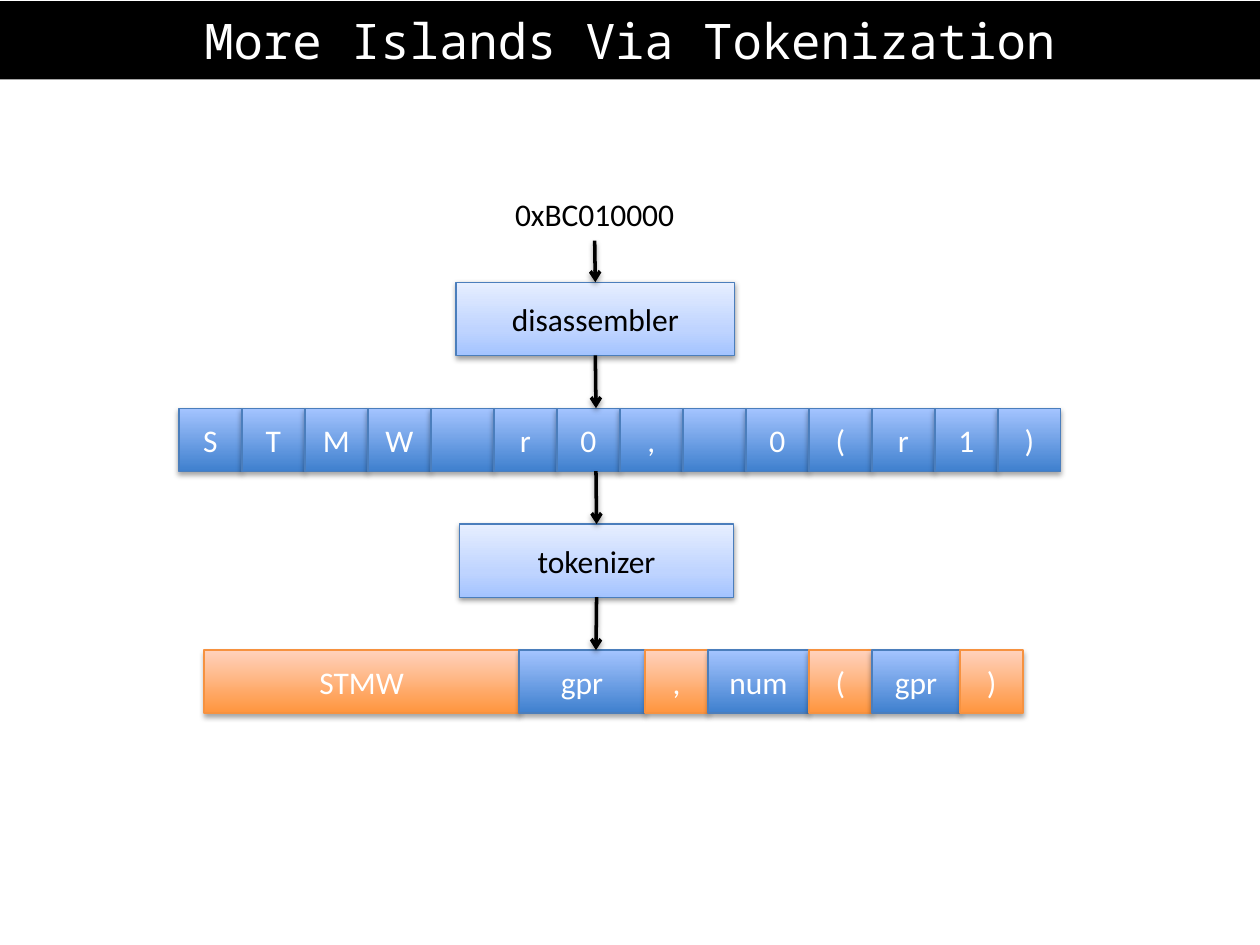
from itertools import accumulate

from pptx import Presentation
from pptx.dml.color import RGBColor as RGB
from pptx.enum.shapes import MSO_CONNECTOR as LINK, MSO_SHAPE as SHAPE
from pptx.enum.text import MSO_ANCHOR as ANCHOR, MSO_AUTO_SIZE as AUTO, PP_ALIGN as ALIGN
from pptx.oxml import parse_xml
from pptx.oxml.ns import nsdecls
from pptx.util import Inches, Pt

COLORS = {"black": "000000", "white": "FFFFFF", "blue": "4B7EBC", "orange": "F69240"}
# Each look: gradient stops (percent, colour), line, text, shadow (percent, distance)
LOOKS = {
    "cell": ([(0, "3F80CE"), (100, "A4C4FF")], "blue", "white", (35, 1.8)),
    "token": ([(0, "FF953E"), (100, "FFD2BD")], "orange", "white", (35, 1.8)),
    "step": ([(0, "A4C4FF"), (35, "BFD4FF"), (100, "E6EEFF")], "blue", "black", (38, 1.6)),
}


def rgb(name):
    return RGB.from_string(COLORS[name])


def write(shape, text, color, font="Calibri", size=18):
    frame = shape.text_frame
    form = {"word_wrap": True, "auto_size": AUTO.NONE, "vertical_anchor": ANCHOR.MIDDLE}
    for key, value in form.items():
        setattr(frame, key, value)
    para = frame.paragraphs[0]
    para.alignment = ALIGN.CENTER
    run = para.add_run()
    run.text = text
    for key, value in {"name": font, "size": Pt(size), "bold": False}.items():
        setattr(run.font, key, value)
    run.font.color.rgb = rgb(color)


def shade(shape, alpha, dist):
    shape._element.spPr.append(parse_xml(
        f'<a:effectLst {nsdecls("a")}><a:outerShdw blurRad="{Pt(3.1)}" dist="{Pt(dist)}" '
        f'dir="5400000" rotWithShape="0"><a:srgbClr val="{COLORS["black"]}">'
        f'<a:alpha val="{alpha * 1000}"/></a:srgbClr></a:outerShdw></a:effectLst>'))


def add_box(slide, box, text, look):
    stops, line, color, shadow = LOOKS[look]
    shape = slide.shapes.add_shape(SHAPE.RECTANGLE, *map(Inches, box))
    shape.fill.gradient()
    shape.fill.gradient_angle = 90
    marks = "".join(f'<a:gs pos="{pos * 1000}"><a:srgbClr val="{tint}"/></a:gs>'
                    for pos, tint in stops)
    old = shape._element.spPr.find(".//{*}gsLst")
    old.getparent().replace(old, parse_xml(f'<a:gsLst {nsdecls("a")}>{marks}</a:gsLst>'))
    shape.line.color.rgb = rgb(line)
    shape.line.width = Pt(0.75)
    shade(shape, *shadow)
    if text.strip():
        write(shape, text, color)
    return shape


def add_row(slide, box, parts):
    """Lay (text, width, look) parts side by side from the left of the box."""
    left, top, _, high = box
    starts = accumulate((wide for _, wide, _ in parts), initial=left)
    for x, (text, wide, look) in zip(starts, parts):
        add_box(slide, (x, top, wide, high), text, look)


def add_arrow(slide, x, top, end, source=None, target=None):
    line = slide.shapes.add_connector(
        LINK.STRAIGHT, Inches(x), Inches(top), Inches(x), Inches(end))
    if source:
        line.begin_connect(source, 2)
    if target:
        line.end_connect(target, 0)
    line.line.color.rgb = rgb("black")
    line.line.width = Pt(2)
    line.line._get_or_add_ln().append(parse_xml(f'<a:tailEnd {nsdecls("a")} type="arrow"/>'))
    shade(line, 38, 1.6)


def add_title(slide, box, text):
    title = slide.shapes.title
    for key, value in zip(("left", "top", "width", "height"), box):
        setattr(title, key, Inches(value))
    title.fill.solid()
    title.fill.fore_color.rgb = rgb("black")
    write(title, text, "white", "Noto Sans Mono", 28)


def add_flow(slide, box):
    left, top, wide, _ = box
    mid = 4.73
    chars, tokens = top + 1.75, top + 3.67

    # Input word and the two steps
    word = slide.shapes.add_textbox(*map(Inches, (3.62, top, 2.2, 0.42)))
    write(word, "0xBC010000", "black")
    split = add_box(slide, (3.62, top + 0.75, 2.21, 0.58), "disassembler", "step")
    lexer = add_box(slide, (3.65, top + 2.67, 2.17, 0.58), "tokenizer", "step")

    # Characters, then the tokens made from them
    add_row(slide, (left, chars, wide, 0.5), [(char, 0.5, "cell") for char in "STMW r0, 0(r1)"])
    add_row(slide, (left + 0.2, tokens, wide, 0.5), [
        ("STMW", 2.5, "token"), ("gpr", 1, "cell"), (",", 0.5, "token"),
        ("num", 0.8, "cell"), ("(", 0.5, "token"), ("gpr", 0.7, "cell"), (")", 0.5, "token")])

    # Arrows down the middle
    add_arrow(slide, mid, top + 0.42, top + 0.75, word, split)
    add_arrow(slide, mid, top + 1.33, chars, source=split)
    add_arrow(slide, mid, chars + 0.5, top + 2.67, target=lexer)
    add_arrow(slide, mid, top + 3.25, tokens, source=lexer)


def main():
    deck = Presentation()
    deck.slide_width, deck.slide_height = Inches(10), Inches(7.5)
    slide = deck.slides.add_slide(deck.slide_layouts[5])
    add_title(slide, (0, 0.01, 10, 0.62), "More Islands Via Tokenization")
    add_flow(slide, (1.42, 1.49, 7, 4.17))
    deck.save("out.pptx")


if __name__ == "__main__":
    main()
